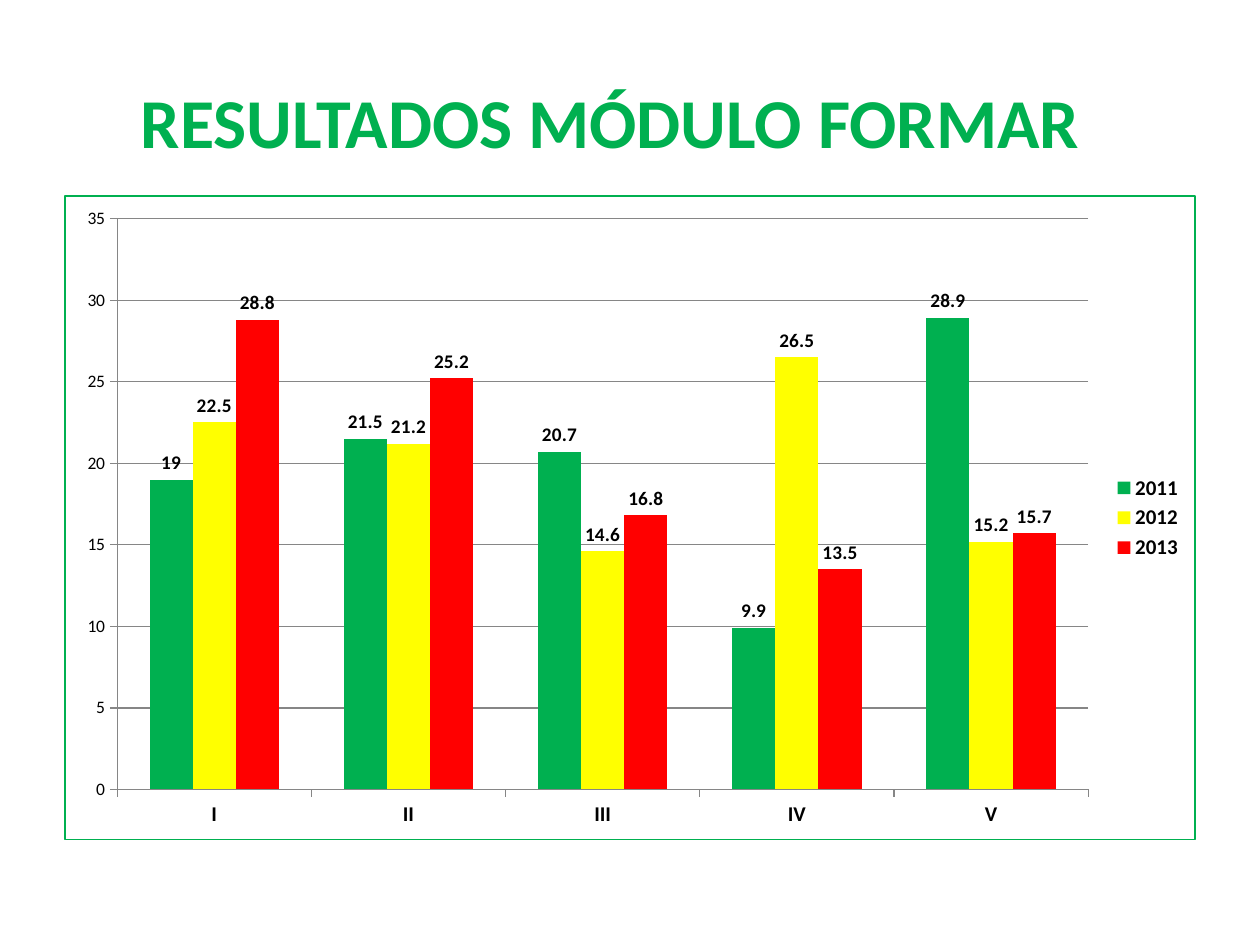
from dataclasses import dataclass

from lxml.etree import SubElement
from pptx import Presentation
from pptx.chart.data import CategoryChartData as Data
from pptx.dml.color import RGBColor as RGB
from pptx.enum.chart import XL_CHART_TYPE as Kind
from pptx.enum.chart import XL_LABEL_POSITION as Spot
from pptx.enum.chart import XL_LEGEND_POSITION as Side
from pptx.enum.chart import XL_TICK_MARK as Tick
from pptx.enum.text import MSO_ANCHOR as Anchor
from pptx.oxml import parse_xml
from pptx.oxml.ns import nsdecls, qn
from pptx.util import Pt


@dataclass(frozen=True)
class Theme:
    font: str = "Calibri"
    green: str = "00B050"
    yellow: str = "FFFF00"
    red: str = "FF0000"
    black: str = "000000"
    gray: str = "868686"
    title: int = 40
    base: int = 10
    label: int = 11
    strong: int = 12


THEME = Theme()
MODULES = ["I", "II", "III", "IV", "V"]
YEARS = [
    ("2011", [19, 21.5, 20.7, 9.9, 28.9], THEME.green),
    ("2012", [22.5, 21.2, 14.6, 26.5, 15.2], THEME.yellow),
    ("2013", [28.8, 25.2, 16.8, 13.5, 15.7], THEME.red),
]


def style(font, size, color=THEME.black, bold=False):
    font.name = THEME.font
    font.size = Pt(size)
    font.bold = bold
    font.color.rgb = RGB.from_string(color)


def add_title(slide, text, *area):
    frame = slide.shapes.add_textbox(*map(Pt, area)).text_frame
    frame.word_wrap = True
    frame.vertical_anchor = Anchor.MIDDLE
    frame.margin_bottom = Pt(25.6)
    run = frame.paragraphs[0].add_run()
    run.text = text
    style(run.font, THEME.title, THEME.green, True)


def add_border(chart, color, width):
    """Outline the whole chart area, which has no public line format."""
    props = parse_xml(f"<c:spPr {nsdecls('c', 'a')}/>")
    line = SubElement(props, qn("a:ln"), w=str(Pt(width)))
    fill = SubElement(line, qn("a:solidFill"))
    SubElement(fill, qn("a:srgbClr"), val=color)
    chart.element.find(qn("c:chart")).addnext(props)


def style_axes(chart):
    cat, val = chart.category_axis, chart.value_axis
    style(cat.tick_labels.font, THEME.strong, bold=True)
    style(val.tick_labels.font, THEME.base)
    val.minimum_scale, val.maximum_scale, val.major_unit = 0, 35, 5
    val.has_major_gridlines = True
    for axis in (cat, val):
        axis.major_tick_mark = Tick.OUTSIDE
        axis.minor_tick_mark = Tick.NONE
    for part in (cat, val, val.major_gridlines):
        part.format.line.color.rgb = RGB.from_string(THEME.gray)
        part.format.line.width = Pt(0.75)


def style_bars(plot):
    plot.gap_width, plot.overlap = 150, 0
    plot.vary_by_categories = False
    for bars, (_, _, color) in zip(plot.series, YEARS):
        bars.format.fill.solid()
        bars.format.fill.fore_color.rgb = RGB.from_string(color)
        bars.invert_if_negative = False
        labels = bars.data_labels
        labels.show_value = True
        labels.position = Spot.OUTSIDE_END
        style(labels.font, THEME.label, bold=True)


def add_bars(slide, *area):
    data = Data()
    data.categories = MODULES
    for name, values, _ in YEARS:
        data.add_series(name, values)
    frame = slide.shapes.add_chart(Kind.COLUMN_CLUSTERED, *map(Pt, area), data)
    chart = frame.chart
    style(chart.font, THEME.base)
    chart.has_title = False
    chart.has_legend = True
    chart.legend.position = Side.RIGHT
    chart.legend.include_in_layout = False
    style(chart.legend.font, THEME.strong, bold=True)
    style_axes(chart)
    style_bars(chart.plots[0])
    add_border(chart, THEME.green, 0.75)


def main():
    deck = Presentation()
    deck.slide_width, deck.slide_height = Pt(720), Pt(540)
    slide = deck.slides.add_slide(deck.slide_layouts[6])
    add_title(slide, "RESULTADOS MÓDULO FORMAR", 73.4, 41, 618.5, 77.8)
    add_bars(slide, 36.7, 111.6, 646.6, 368.6)
    deck.save("out.pptx")


if __name__ == "__main__":
    main()
